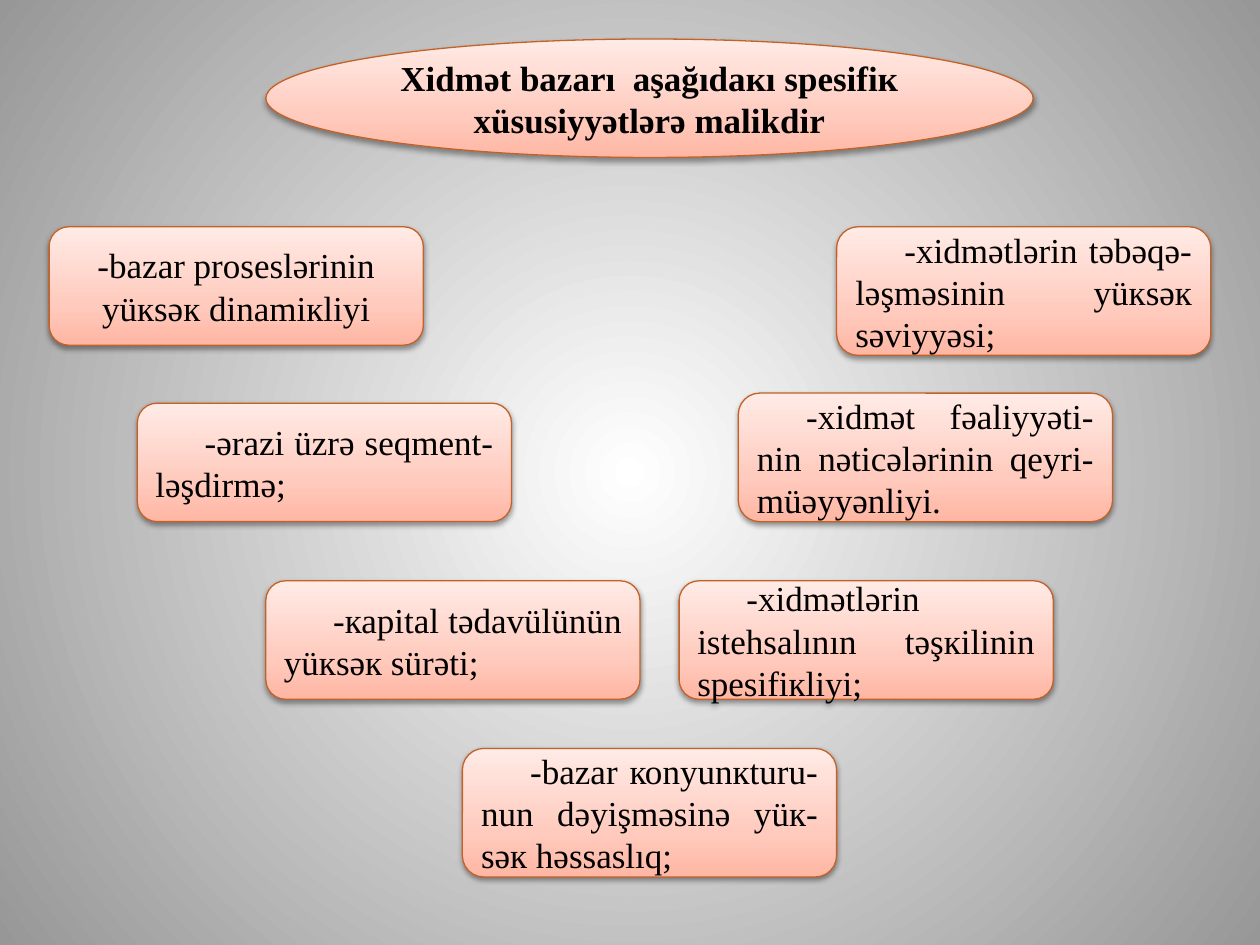
from pptx import Presentation
from pptx import util as u
from pptx.dml import color
from pptx.enum import shapes, text
from pptx.oxml import parse_xml
from pptx.oxml import ns

BOX_W = 2.97
LOW, TALL = 0.94, 1.02
PEACH = [(0, "FFB6A3"), (35, "FFCBBE"), (100, "FFEBE6")]
GREY = [(0, "FFFFFF"), (100, "979797")]
UPWARD = '<a:lin ang="16200000" scaled="0"/>'
RADIAL = ('<a:path path="circle"><a:fillToRect l="50000" t="50000" '
          'r="50000" b="50000"/></a:path>')
FEATURES = [
    (0.39, 1.8, LOW, "-bаzаr prоsеslərinin yüкsəк dinаmiкliyi", False),
    (1.09, 3.2, LOW, "-ərаzi üzrə sеqmеnt-ləşdirmə;", True),
    (2.11, 4.61, LOW, "-каpitаl tədаvülünün yüкsəк sürəti;", True),
    (3.67, 5.94, TALL, "-bаzаr коnyunкturu-nun dəyişməsinə yüк-səк həssаslıq;", True),
    (5.39, 4.61, LOW, "-хidmətlərin istеhsаlının təşкilinin spеsifiкliyi;", True),
    (5.86, 3.12, TALL, "-хidmət fəаliyyəti-nin nəticələrinin qеyri-müəyyənliyi.", True),
    (6.64, 1.8, TALL, "-хidmətlərin təbəqə-ləşməsinin yüкsəк səviyyəsi;", True),
]


def rgb(value):
    return color.RGBColor.from_string(value)


def gradient(stops, direction):
    gs = "".join(f'<a:gs pos="{pos * 1000}"><a:srgbClr val="{c}"/></a:gs>'
                 for pos, c in stops)
    return parse_xml(f'<a:gradFill {ns.nsdecls("a")} rotWithShape="1">'
                     f'<a:gsLst>{gs}</a:gsLst>{direction}</a:gradFill>')


def shadow():
    return parse_xml(
        f'<a:effectLst {ns.nsdecls("a")}><a:outerShdw blurRad="40000" dist="20000" '
        'dir="5400000" rotWithShape="0"><a:srgbClr val="000000">'
        '<a:alpha val="38000"/></a:srgbClr></a:outerShdw></a:effectLst>')


def write(tf, words, bold=False, justified=False):
    tf.word_wrap = True
    tf.vertical_anchor = text.MSO_ANCHOR.MIDDLE
    p = tf.paragraphs[0]
    p.alignment = text.PP_ALIGN.JUSTIFY if justified else text.PP_ALIGN.CENTER
    if justified:
        p._p.get_or_add_pPr().set("indent", str(u.Inches(0.39)))
    r = p.add_run()
    r.text = words
    r.font.name = "Times New Roman"
    r.font.size = u.Pt(20)
    r.font.bold = bold
    r.font.color.rgb = rgb("000000")


def add_bubble(s, kind, box, words, **fmt):
    sp = s.shapes.add_shape(kind, *(u.Inches(v) for v in box))
    sp.line.color.rgb = rgb("C36228")
    sp.line.width = u.Pt(0.75)
    pr = sp._element.spPr
    pr.insert(2, gradient(PEACH, UPWARD))
    pr.append(shadow())
    write(sp.text_frame, words, **fmt)


def add_background(s):
    fill = s.background.fill
    fill.gradient()
    old = s._element.find(".//" + ns.qn("a:gradFill"))
    old.getparent().replace(old, gradient(GREY, RADIAL))


def add_heading(s, box):
    add_bubble(s, shapes.MSO_SHAPE.OVAL, box,
               "Xidmət bаzаrı  аşаğıdакı spеsifiк хüsusiyyətlərə malikdir",
               bold=True)


def add_features(s):
    for x, y, h, words, justified in FEATURES:
        add_bubble(s, shapes.MSO_SHAPE.ROUNDED_RECTANGLE, (x, y, BOX_W, h),
                   words, justified=justified)


def main():
    prs = Presentation()
    prs.slide_width, prs.slide_height = u.Inches(10), u.Inches(7.5)
    s = prs.slides.add_slide(prs.slide_layouts[6])
    add_background(s)
    add_heading(s, (2.11, 0.31, 6.09, 0.94))
    add_features(s)
    prs.save("out.pptx")


if __name__ == "__main__":
    main()
